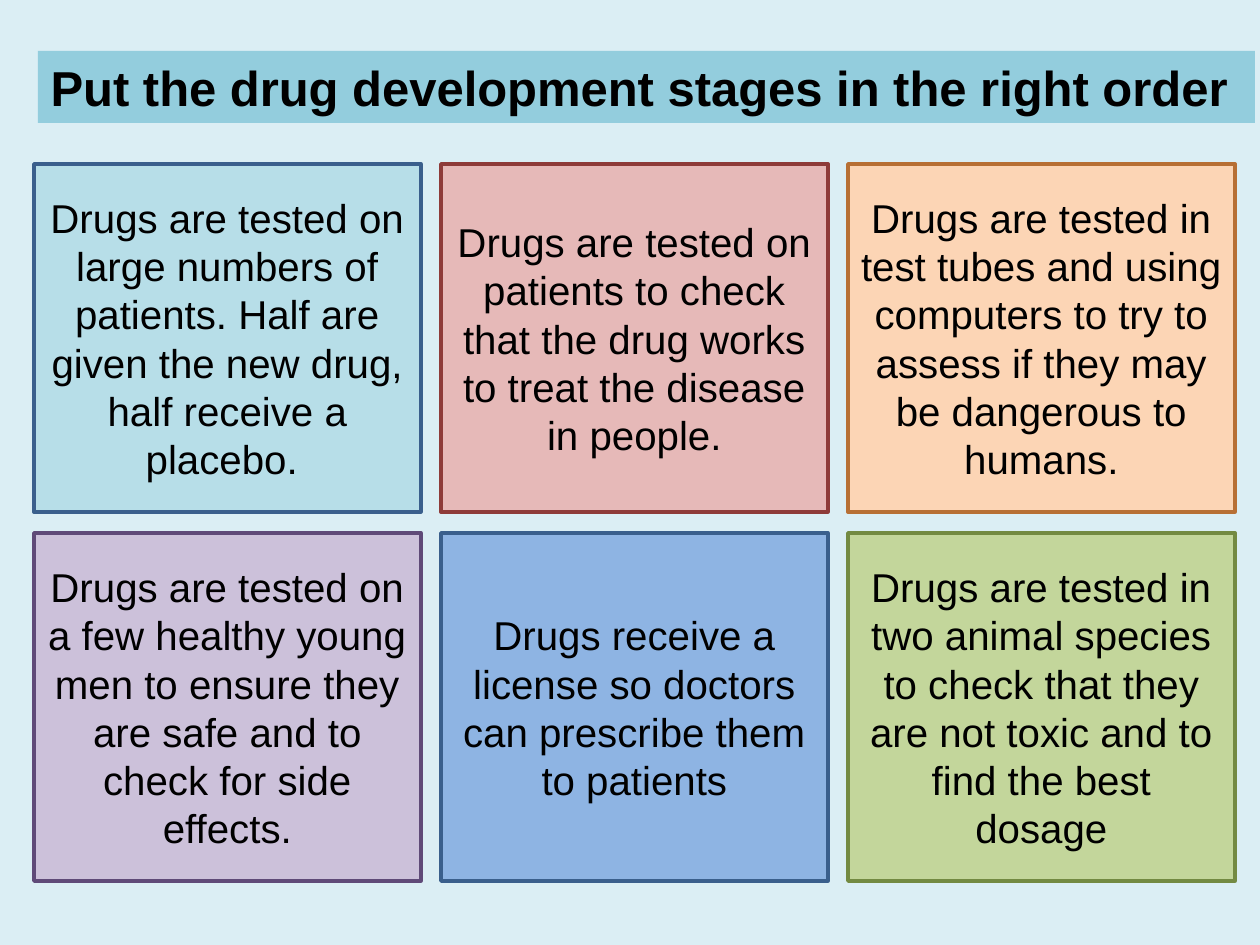
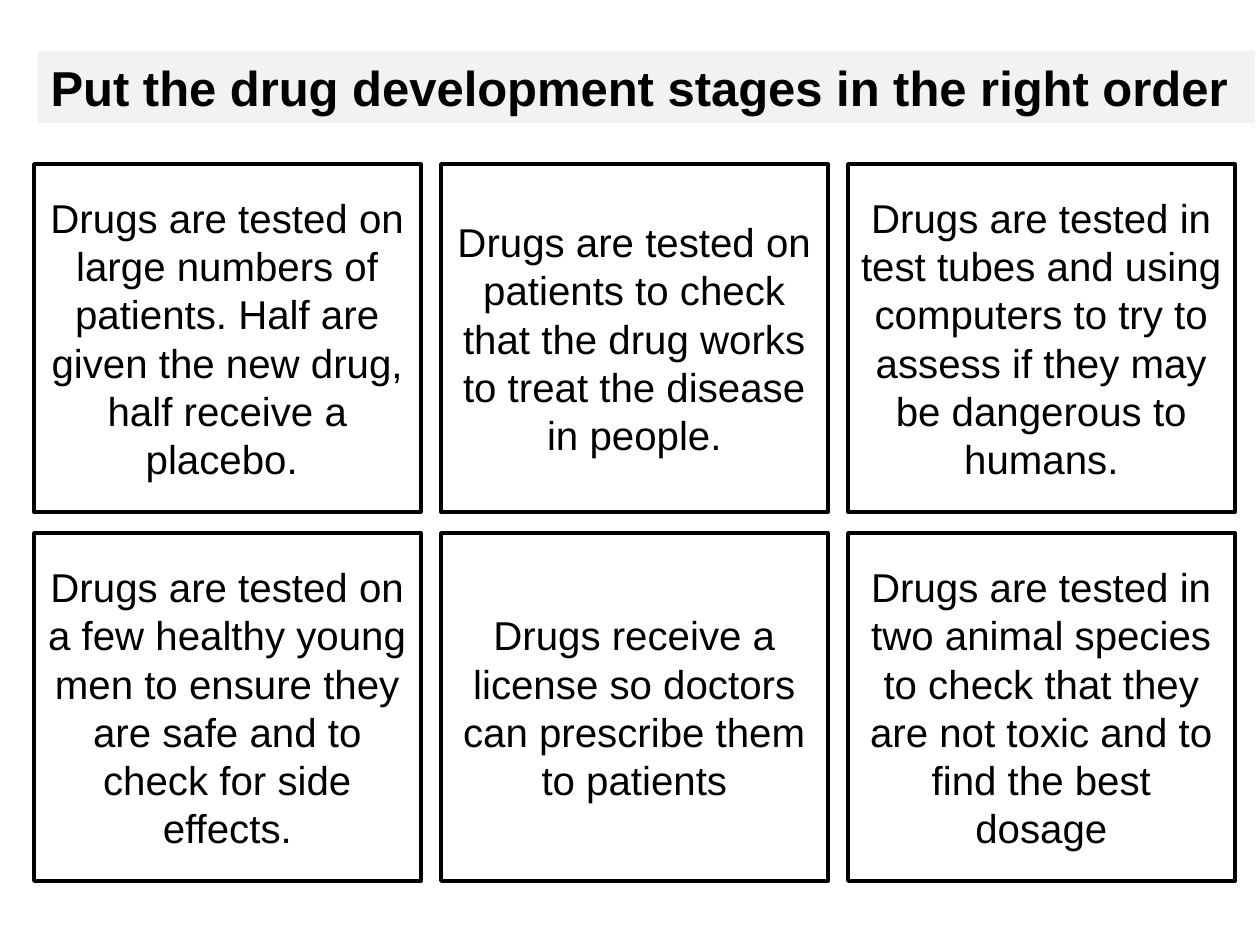
from dataclasses import dataclass
from pptx import Presentation
from pptx.dml.color import RGBColor
from pptx.enum.shapes import MSO_SHAPE
from pptx.enum.text import MSO_ANCHOR, MSO_AUTO_SIZE, PP_ALIGN
from pptx.util import Pt

TITLE = "Put the drug development stages in the right order"
STAGES = [
    "Drugs are tested on large numbers of patients. Half are given the new drug, half receive a placebo. ",
    "Drugs are tested on patients to check that the drug works to treat the disease in people.",
    "Drugs are tested in test tubes and using computers to try to assess if they may be dangerous to humans.",
    "Drugs are tested on a few healthy young men to ensure they are safe and to check for side effects.",
    "Drugs receive a license so doctors can prescribe them to patients",
    "Drugs are tested in two animal species to check that they are not toxic and to find the best dosage",
]
VERSIONS = [
    {
        "background": "DBEEF4",
        "band": "93CDDD",
        "cards": [
            ("B7DEE8", "3A5F8C"), ("E6B9B8", "8E3B39"), ("FCD5B5", "B76F34"),
            ("CCC1DA", "5F4A78"), ("8EB4E3", "3A5F8C"), ("C3D69B", "738A42"),
        ],
    },
    {
        "background": "FFFFFF",
        "band": "F2F2F2",
        "cards": [("FFFFFF", "000000")] * len(STAGES),
    },
]


@dataclass(frozen=True)
class Theme:
    font: str = "Arial"
    text: str = "000000"
    title_size: int = 28
    card_size: int = 23
    outline: int = 2


THEME = Theme()
EMU_PER_PX = 914400 / 126
SLIDE_SIZE = (1260, 945)
TITLE_BOX = (38, 51, 1217, 72)
COLUMNS = 3
GRID_LEFT, GRID_TOP = 34, 164
CARD_WIDTH, CARD_HEIGHT = 387, 348
COLUMN_GAP, ROW_GAP = 20, 21
TITLE_FONT = {"name": THEME.font, "size": Pt(THEME.title_size), "bold": True}
CARD_FONT = {"name": THEME.font, "size": Pt(THEME.card_size), "bold": False}


def px(length):
    return round(length * EMU_PER_PX)


def set_all(target, values):
    for name, value in values.items():
        setattr(target, name, value)


def paint(fill, color):
    fill.solid()
    fill.fore_color.rgb = RGBColor.from_string(color)


def write(shape, text, font, alignment):
    frame = shape.text_frame
    frame.text = text
    set_all(frame, {
        "word_wrap": True,
        "auto_size": MSO_AUTO_SIZE.NONE,
        "vertical_anchor": MSO_ANCHOR.MIDDLE,
    })
    paragraph = frame.paragraphs[0]
    paragraph.alignment = alignment
    run_font = paragraph.runs[0].font
    set_all(run_font, font)
    run_font.color.rgb = RGBColor.from_string(THEME.text)


def add_title(slide, band):
    title = slide.shapes.title
    set_all(title, dict(zip(("left", "top", "width", "height"), map(px, TITLE_BOX))))
    paint(title.fill, band)
    write(title, TITLE, TITLE_FONT, PP_ALIGN.LEFT)


def add_card(slide, index, text, fill, outline):
    row, column = divmod(index, COLUMNS)
    left = GRID_LEFT + column * (CARD_WIDTH + COLUMN_GAP)
    top = GRID_TOP + row * (CARD_HEIGHT + ROW_GAP)
    card = slide.shapes.add_shape(
        MSO_SHAPE.RECTANGLE, *map(px, (left, top, CARD_WIDTH, CARD_HEIGHT))
    )
    card.shadow.inherit = False
    paint(card.fill, fill)
    paint(card.line.fill, outline)
    card.line.width = Pt(THEME.outline)
    write(card, text, CARD_FONT, PP_ALIGN.CENTER)


def main():
    presentation = Presentation()
    presentation.slide_width, presentation.slide_height = map(px, SLIDE_SIZE)
    title_only = presentation.slide_layouts.get_by_name("Title Only")
    for version in VERSIONS:
        slide = presentation.slides.add_slide(title_only)
        paint(slide.background.fill, version["background"])
        add_title(slide, version["band"])
        for index, (text, colors) in enumerate(zip(STAGES, version["cards"])):
            add_card(slide, index, text, *colors)
    presentation.save("out.pptx")


if __name__ == "__main__":
    main()
